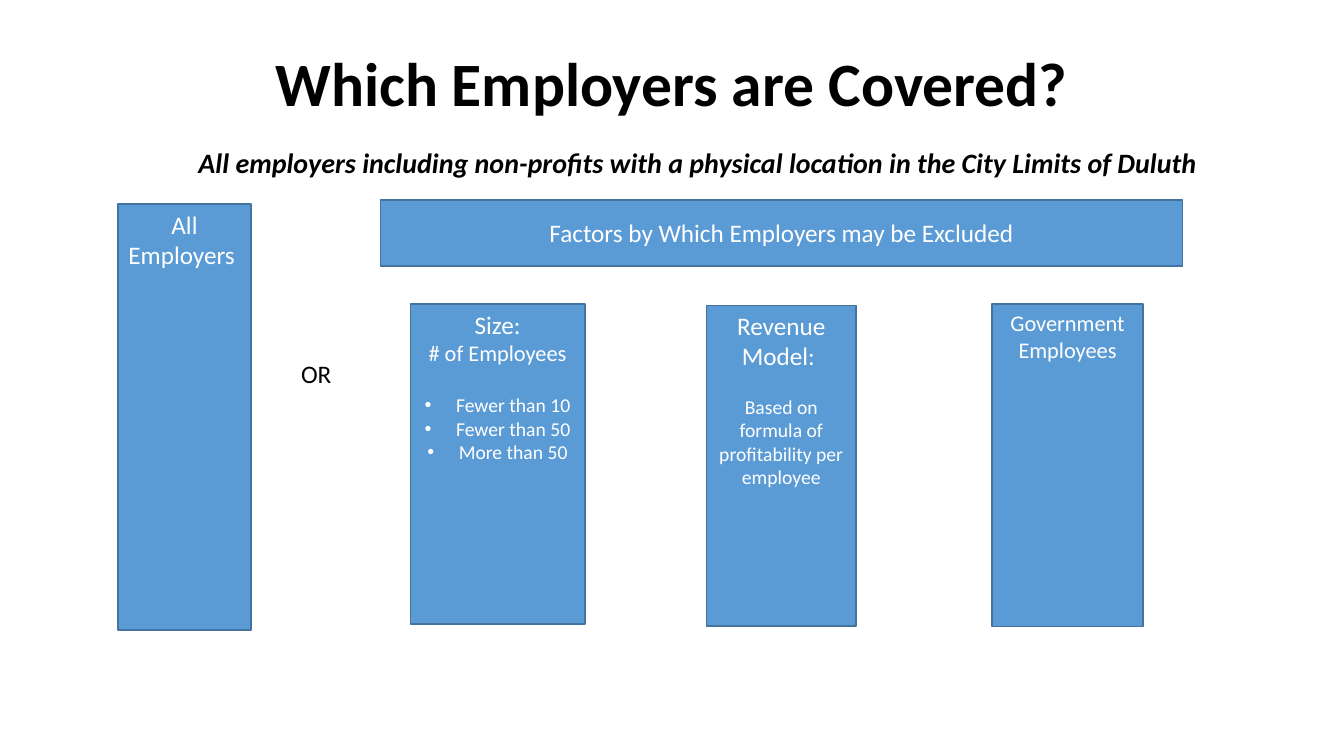
from lxml import etree
from pptx import Presentation
from pptx import util as u
from pptx.dml import color
from pptx.enum import shapes, text
from pptx.oxml import ns

TOP = text.MSO_ANCHOR.TOP
MIDDLE = text.MSO_ANCHOR.MIDDLE


def rgb(value):
    return color.RGBColor.from_string(value)


def write(shape, lines, ink, anchor=TOP, bold=False, italic=False):
    frame = shape.text_frame
    frame.word_wrap = True
    frame.vertical_anchor = anchor
    for index, (wording, size, gap, bulleted) in enumerate(lines):
        paragraph = frame.add_paragraph() if index else frame.paragraphs[0]
        paragraph.alignment = text.PP_ALIGN.CENTER
        paragraph.space_before = u.Pt(gap)
        run = paragraph.add_run()
        run.text = wording
        run.font.name = "Calibri"
        run.font.size = u.Pt(size)
        run.font.bold = bold
        run.font.italic = italic
        run.font.color.rgb = rgb(ink)
        if bulleted:
            properties = paragraph._p.get_or_add_pPr()
            properties.set("marL", str(u.Cm(0.79)))
            properties.set("indent", str(u.Cm(-0.79)))
            etree.SubElement(properties, ns.qn("a:buFont")).set("typeface", "Arial")
            etree.SubElement(properties, ns.qn("a:buChar")).set("char", "•")


presentation = Presentation()
presentation.slide_width = u.Cm(33.87)
presentation.slide_height = u.Cm(19.05)
slide = presentation.slides.add_slide(presentation.slide_layouts[6])

title = slide.shapes.add_textbox(u.Cm(2.33), u.Cm(1.01), u.Cm(29.21), u.Cm(2.33))
write(title, [("Which Employers are Covered?", 44, 0, False)], "000000", MIDDLE, bold=True)
title.text_frame.paragraphs[0].line_spacing = 0.9

subtitle = slide.shapes.add_textbox(u.Cm(4.4), u.Cm(3.55), u.Cm(26.37), u.Cm(1.11))
subtitle_text = "All employers including non-profits with a physical location in the City Limits of Duluth"
write(subtitle, [(subtitle_text, 20, 0, False)], "000000", bold=True, italic=True)

alternative = slide.shapes.add_textbox(u.Cm(7.26), u.Cm(8.9), u.Cm(1.42), u.Cm(1.02))
write(alternative, [("OR", 18, 0, False)], "000000")
alternative.text_frame.word_wrap = False

boxes = [
    (2.97, 5.14, 3.36, 10.74, TOP, [("All Employers ", 18, 0, False)]),
    (9.59, 5.04, 20.21, 1.66, MIDDLE,
     [("Factors by Which Employers may be Excluded", 18, 0, False)]),
    (10.34, 7.66, 4.4, 8.06, TOP, [
        ("Size:", 18, 0, False),
        ("# of Employees", 16, 0, False),
        ("Fewer than 10", 14, 19.5, True),
        ("Fewer than 50", 14, 0, True),
        ("More than 50", 14, 0, True),
    ]),
    (17.81, 7.7, 3.76, 8.08, TOP, [
        ("Revenue Model: ", 18, 0, False),
        ("Based on formula of profitability per employee", 14, 17, False),
    ]),
    (25.0, 7.66, 3.81, 8.13, TOP, [("Government Employees", 16, 0, False)]),
]
for left, top, width, height, anchor, lines in boxes:
    box = slide.shapes.add_shape(
        shapes.MSO_SHAPE.FLOWCHART_PROCESS, u.Cm(left), u.Cm(top), u.Cm(width), u.Cm(height))
    box.shadow.inherit = False
    box.fill.solid()
    box.fill.fore_color.rgb = rgb("5B9BD5")
    box.line.color.rgb = rgb("43739E")
    box.line.width = u.Pt(1)
    write(box, lines, "FFFFFF", anchor)

presentation.save("out.pptx")
